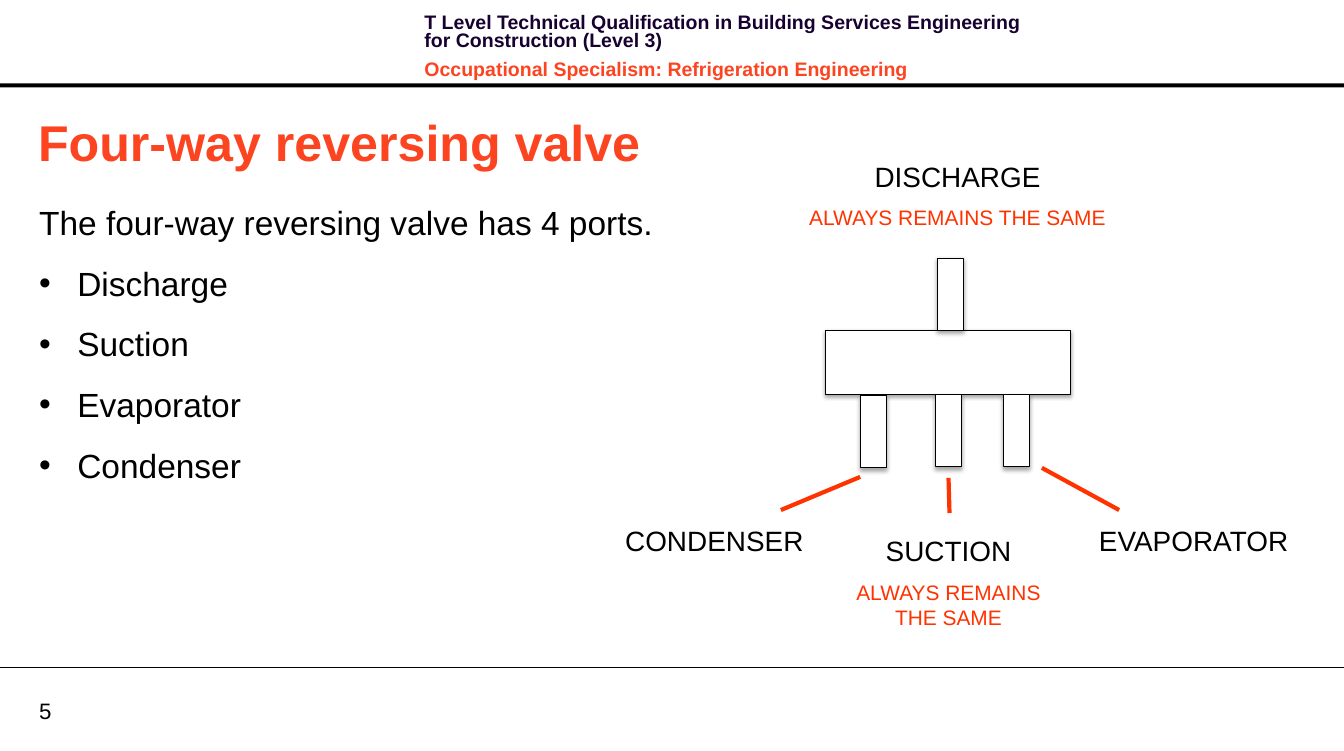
"""Build the slide about the ports of a four-way reversing valve."""
from lxml.etree import SubElement
from pptx import Presentation
from pptx.dml.color import RGBColor
from pptx.enum.shapes import MSO_CONNECTOR, MSO_SHAPE
from pptx.enum.text import MSO_ANCHOR, MSO_AUTO_SIZE, PP_ALIGN
from pptx.oxml.ns import qn
from pptx.util import Pt

PX = 9144
BLACK, NAVY, ORANGE, RED, WHITE = "000000", "170130", "FC4421", "FF3300", "FFFFFF"
color = RGBColor.from_string


def add_frame(left, top, width, height, inset_x=10, inset_y=5):
    """Add a wrapping text box and return its text frame."""
    box = page.shapes.add_textbox(left * PX, top * PX, width * PX, height * PX)
    frame = box.text_frame
    frame.word_wrap = True
    frame.margin_left = frame.margin_right = inset_x * PX
    frame.margin_top = frame.margin_bottom = inset_y * PX
    return frame


def add_span(para, text, size, ink=BLACK, bold=False):
    """Add one Arial run to a paragraph."""
    span = para.add_run()
    span.text = text
    span.font.name = "Arial"
    span.font.size = Pt(size)
    span.font.bold = bold
    span.font.color.rgb = color(ink)


deck = Presentation()
deck.slide_width, deck.slide_height = 1339 * PX, 748 * PX
page = deck.slides.add_slide(deck.slide_layouts[5])

title = page.shapes.title
title.left, title.top, title.width, title.height = 28 * PX, 105 * PX, 1272 * PX, 71 * PX
title.text_frame.auto_size = MSO_AUTO_SIZE.NONE
title.text_frame.vertical_anchor = MSO_ANCHOR.MIDDLE
para = title.text_frame.paragraphs[0]
para.alignment = PP_ALIGN.LEFT
add_span(para, "Four-way reversing valve", 36, ORANGE, True)

header_bar = page.shapes.add_shape(MSO_SHAPE.RECTANGLE, 0, 83 * PX, 1339 * PX, 4 * PX)
header_bar.shadow.inherit = False
header_bar.fill.solid()
header_bar.fill.fore_color.rgb = color(BLACK)
header_bar.line.fill.background()

header = add_frame(413, 10, 630, 64)
para = header.paragraphs[0]
add_span(para, "T Level Technical Qualification in Building Services Engineering "
               "for Construction (Level 3)", 14, NAVY, True)
para = header.add_paragraph()
para.space_before = Pt(4)
add_span(para, "Occupational Specialism: Refrigeration Engineering", 14, ORANGE, True)
for para in header.paragraphs:
    para.line_spacing = Pt(13.1)
    para.space_after = Pt(4)

page_number = add_frame(39, 694, 64, 27, 0, 0)
page_number.vertical_anchor = MSO_ANCHOR.MIDDLE
add_span(page_number.paragraphs[0], "5", 16)

body = add_frame(39, 197, 1021, 477, 0, 0)
add_span(body.paragraphs[0], "The four-way reversing valve has 4 ports.", 24)
for port in ("Discharge", "Suction", "Evaporator", "Condenser"):
    para = body.add_paragraph()
    properties = para._p.get_or_add_pPr()
    properties.set("marL", str(38 * PX))
    properties.set("indent", str(-38 * PX))
    SubElement(properties, qn("a:buFont"), typeface="Arial")
    SubElement(properties, qn("a:buChar"), char="•")
    add_span(para, port, 24)
for para in body.paragraphs:
    para.line_spacing = 1.1
    para.space_after = Pt(12)

labels = [
    ("DISCHARGE", "ALWAYS REMAINS THE SAME", 793, 154, 322, 82),
    ("SUCTION", "ALWAYS REMAINS THE SAME", 841, 527, 208, 107),
    ("EVAPORATOR", None, 1085, 517, 225, 44),
    ("CONDENSER", None, 613, 517, 220, 44),
]
for name, note, *place in labels:
    frame = add_frame(*place)
    para = frame.paragraphs[0]
    add_span(para, name, 20)
    if note:
        para.alignment = PP_ALIGN.CENTER
        para = frame.add_paragraph()
        para.alignment = PP_ALIGN.CENTER
        para.space_before = Pt(8.6)
        add_span(para, note, 15, RED)

lines = [
    (0, 665, 1339, 665, BLACK, 0.75),
    (857, 475, 778, 508, RED, 3),
    (945, 476, 946, 511, RED, 3),
    (1115, 508, 1038, 466, RED, 3),
]
for x1, y1, x2, y2, ink, weight in lines:
    line = page.shapes.add_connector(
        MSO_CONNECTOR.STRAIGHT, x1 * PX, y1 * PX, x2 * PX, y2 * PX)
    line.line.color.rgb = color(ink)
    line.line.width = Pt(weight)
    SubElement(line._element.spPr, qn("a:effectLst"))

valve = page.shapes.add_group_shape()
valve_parts = [(822, 329, 245, 64)] + [
    (left, top, 26, 72) for left, top in ((934, 257), (932, 393), (1000, 393), (857, 394))]
for left, top, width, height in valve_parts:
    part = valve.shapes.add_shape(
        MSO_SHAPE.RECTANGLE, left * PX, top * PX, width * PX, height * PX)
    part.fill.solid()
    part.fill.fore_color.rgb = color(WHITE)
    part.line.color.rgb = color(BLACK)
    part.line.width = Pt(0.75)
    part.shadow.inherit = False
    effects = part._element.spPr.find(qn("a:effectLst"))
    shadow = SubElement(effects, qn("a:outerShdw"), blurRad=str(Pt(3.1)),
                        dist=str(Pt(1.8)), dir="5400000", rotWithShape="0")
    shade = SubElement(shadow, qn("a:srgbClr"), val=BLACK)
    SubElement(shade, qn("a:alpha"), val="35000")

deck.save("out.pptx")
